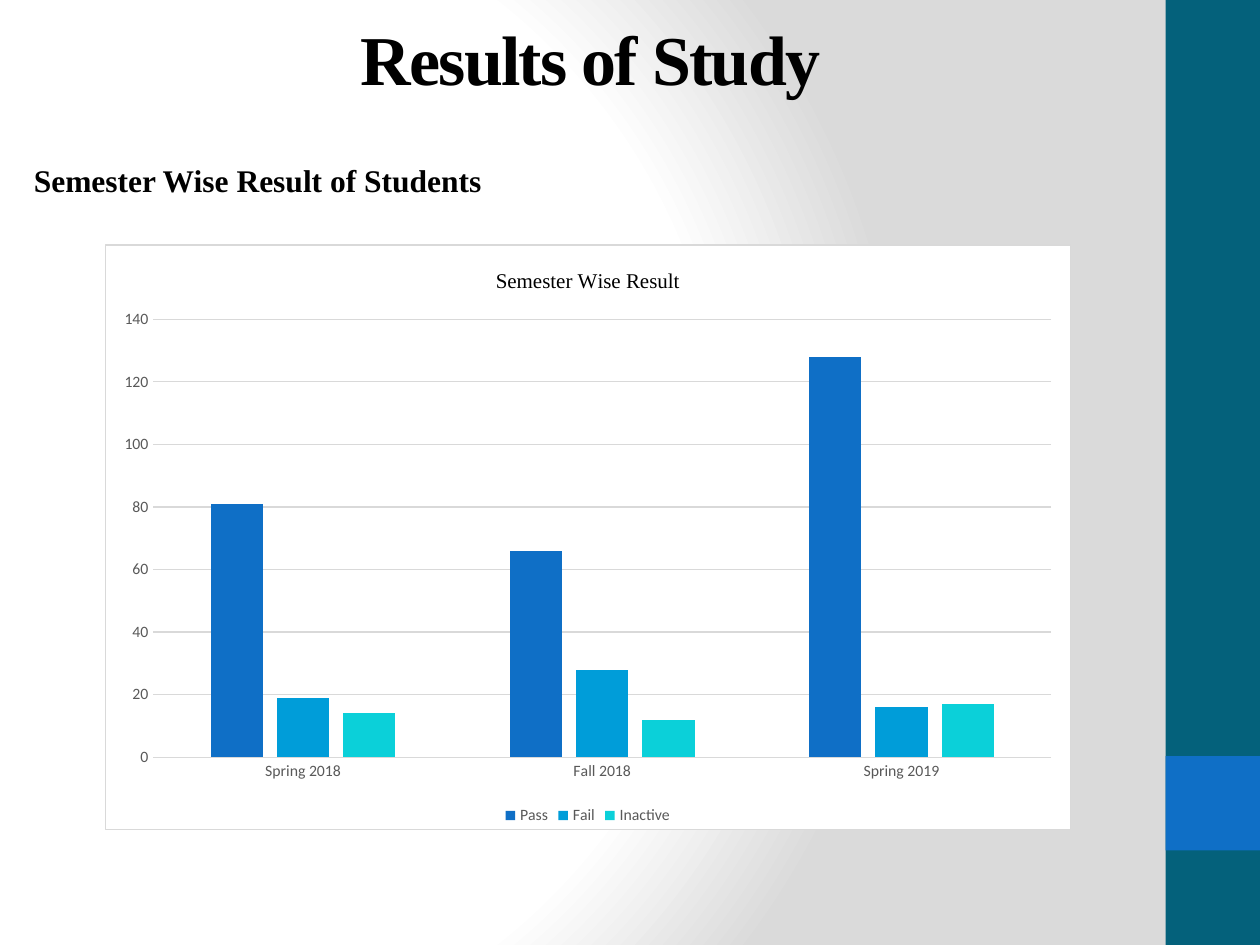
from lxml import etree
from pptx import Presentation
from pptx.chart.data import CategoryChartData
from pptx.dml.color import RGBColor
from pptx.enum.chart import XL_CHART_TYPE, XL_LEGEND_POSITION, XL_TICK_MARK
from pptx.enum.shapes import MSO_SHAPE
from pptx.enum.text import MSO_ANCHOR, PP_ALIGN
from pptx.oxml import parse_xml
from pptx.util import Inches, Pt

COLUMN_CLUSTERED = XL_CHART_TYPE.COLUMN_CLUSTERED
LEGEND_BOTTOM = XL_LEGEND_POSITION.BOTTOM
NO_TICK = XL_TICK_MARK.NONE
RECTANGLE = MSO_SHAPE.RECTANGLE
TOP, MIDDLE = MSO_ANCHOR.TOP, MSO_ANCHOR.MIDDLE
LEFT, CENTER = PP_ALIGN.LEFT, PP_ALIGN.CENTER

# Content
HEADING = "Results of Study"
SUBHEADING = "Semester Wise Result of Students"
CHART_TITLE = "Semester Wise Result"
SEMESTERS = ["Spring 2018", "Fall 2018", "Spring 2019"]
RESULTS = [
    ("Pass", [81, 66, 128], "blue"),
    ("Fail", [19, 28, 16], "sky"),
    ("Inactive", [14, 12, 17], "aqua"),
]

# Look
COLORS = {
    "white": "FFFFFF", "black": "000000", "shade": "DADADA",
    "teal": "04617B", "blue": "0F6FC6", "sky": "009DD9", "aqua": "0BD0D9",
    "grid": "D9D9D9", "label": "595959",
}
SERIF, SANS = "Times New Roman", "Calibri"
WIDTH, HEIGHT = 10, 7.5
BAND = 0.75
HAIRLINE = 0.75

NS_A = "http://schemas.openxmlformats.org/drawingml/2006/main"
NS_P = "http://schemas.openxmlformats.org/presentationml/2006/main"
NS_C = "http://schemas.openxmlformats.org/drawingml/2006/chart"


def rgb(name):
    return RGBColor.from_string(COLORS[name])


def box(left, top, width, height):
    return [Inches(v) for v in (left, top, width, height)]


def style_font(font, face, size, color, bold=False):
    font.name, font.size, font.bold = face, Pt(size), bold
    font.color.rgb = rgb(color)


def write(frame, text, size, align, anchor):
    frame.text = text
    frame.vertical_anchor = anchor
    paragraph = frame.paragraphs[0]
    paragraph.alignment = align
    style_font(paragraph.runs[0].font, SERIF, size, "black", bold=True)
    return paragraph.runs[0]


def style_line(line, color):
    line.width = Pt(HAIRLINE)
    line.color.rgb = rgb(color)


def set_background(slide):
    stops = "".join(
        f'<a:gs pos="{share * 1000}"><a:srgbClr val="{COLORS[name]}"/></a:gs>'
        for share, name in [(0, "white"), (75, "white"), (100, "shade")])
    slide.element.cSld.insert(0, parse_xml(
        f'<p:bg xmlns:p="{NS_P}" xmlns:a="{NS_A}"><p:bgPr>'
        f'<a:gradFill rotWithShape="1"><a:gsLst>{stops}</a:gsLst>'
        '<a:path path="circle">'
        '<a:fillToRect l="20000" t="50000" r="100000" b="50000"/>'
        '</a:path></a:gradFill><a:effectLst/></p:bgPr></p:bg>'))


def add_band(slide, top, height, color):
    band = slide.shapes.add_shape(
        RECTANGLE, *box(WIDTH - BAND, top, BAND, height))
    band.shadow.inherit = False
    band.fill.solid()
    band.fill.fore_color.rgb = rgb(color)
    band.line.fill.background()


def add_result_chart(slide):
    data = CategoryChartData()
    data.categories = SEMESTERS
    for name, values, _ in RESULTS:
        data.add_series(name, values)
    chart = slide.shapes.add_chart(
        COLUMN_CLUSTERED, *box(0.83, 1.94, 7.67, 4.65), data).chart
    style_font(chart.font, SANS, 10, "black")

    # Chart title and legend
    title_frame = chart.chart_title.text_frame
    title_frame.text = CHART_TITLE
    style_font(title_frame.paragraphs[0].runs[0].font, SERIF, 12, "black")
    chart.chart_title.include_in_layout = False
    chart.has_legend = True
    chart.legend.position = LEGEND_BOTTOM
    chart.legend.include_in_layout = False
    style_font(chart.legend.font, SANS, 9, "label")

    # Columns
    plot = chart.plots[0]
    plot.gap_width, plot.overlap, plot.vary_by_categories = 219, -27, False
    for series, (_, _, color) in zip(plot.series, RESULTS):
        series.format.fill.solid()
        series.format.fill.fore_color.rgb = rgb(color)

    # Axes
    for axis in (chart.category_axis, chart.value_axis):
        axis.major_tick_mark = axis.minor_tick_mark = NO_TICK
        style_font(axis.tick_labels.font, SANS, 9, "label")
    style_line(chart.category_axis.format.line, "grid")
    values = chart.value_axis
    values.minimum_scale, values.maximum_scale, values.major_unit = 0, 140, 20
    values.format.line.fill.background()
    style_line(values.major_gridlines.format.line, "grid")

    # White chart area with a thin border
    area = etree.fromstring(
        f'<c:spPr xmlns:c="{NS_C}" xmlns:a="{NS_A}">'
        f'<a:solidFill><a:srgbClr val="{COLORS["white"]}"/></a:solidFill>'
        f'<a:ln w="{Pt(HAIRLINE)}"><a:solidFill>'
        f'<a:srgbClr val="{COLORS["grid"]}"/></a:solidFill></a:ln></c:spPr>')
    chart.element.find(f"{{{NS_C}}}chart").addnext(area)


def main():
    deck = Presentation()
    deck.slide_width, deck.slide_height = Inches(WIDTH), Inches(HEIGHT)
    slide = deck.slides.add_slide(deck.slide_layouts[5])
    set_background(slide)

    # Side band with its accent square
    add_band(slide, 0, HEIGHT, "teal")
    add_band(slide, HEIGHT - 2 * BAND, BAND, "blue")

    # Headings
    title = slide.shapes.title
    title.left, title.top, title.width, title.height = box(
        0.52, -0.17, 8.33, 1.25)
    heading = write(title.text_frame, HEADING, 40, CENTER, MIDDLE)
    heading.font._element.set("spc", "-100")
    subtitle = slide.shapes.add_textbox(*box(0.17, 1.23, 3.86, 0.71))
    subtitle.text_frame.word_wrap = False
    write(subtitle.text_frame, SUBHEADING, 18, LEFT, TOP)

    add_result_chart(slide)
    deck.save("out.pptx")


if __name__ == "__main__":
    main()
